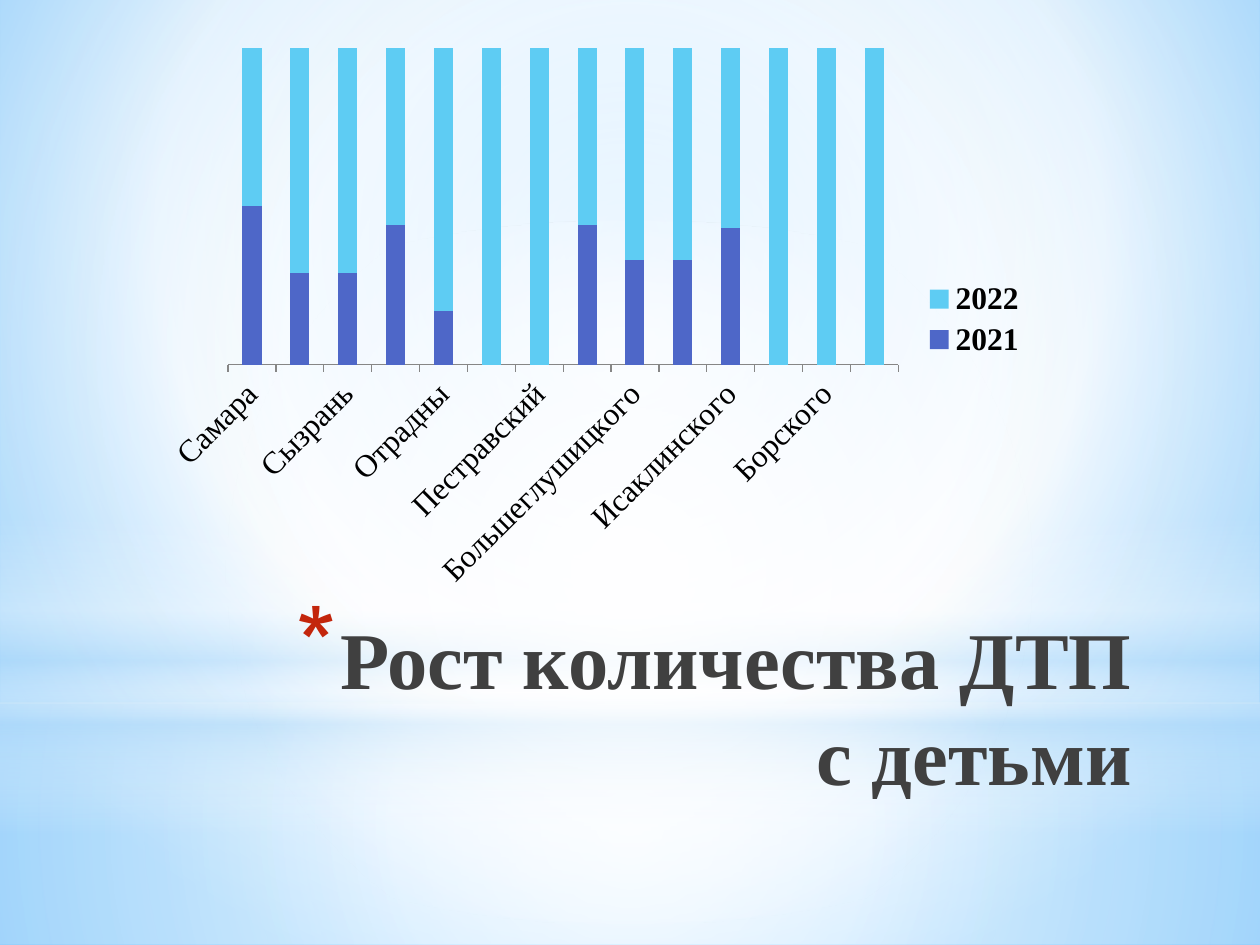
from dataclasses import dataclass

from lxml import etree
from pptx import Presentation
from pptx.chart.data import CategoryChartData
from pptx.dml.color import RGBColor
from pptx.enum import chart as ch, shapes, text
from pptx.oxml import parse_xml
from pptx.oxml.ns import nsdecls, qn
from pptx.util import Inches, Pt

FONT = "Times New Roman"
PALE = "B4DCFA"
WHITE = "FFFFFF"
CITIES = {  # share of 2021 in the two-year total, percent
    "Самара": 50, "Чапаевск": 29, "Сызрань": 29, "Новокуйбышевск": 44,
    "Отрадны": 17, "Камышлинский": 0, "Пестравский": 0, "Безенчукского": 44,
    "Большеглушицкого": 33, "Похвистневского": 33, "Исаклинского": 43,
    "Кошкинского": 0, "Борского": 0, "Шигонского": 0,
}


@dataclass
class Gradient:
    """Stops are (position %, colour, opacity %); no focus means top to bottom."""
    stops: list[tuple[int, str, int]]
    focus: tuple[int, int, int, int] | None = None


@dataclass
class Glow:
    top: float
    height: float
    kind: shapes.MSO_SHAPE
    gradient: Gradient


CENTRE = (50, 50, 50, 50)
BACKDROP = Gradient([(0, "9ED5FF", 100), (60, WHITE, 100), (100, "5BB9FF", 100)],
                    (20, 10, 20, 60))
GLOWS = [
    Glow(5.58, 1.92, shapes.MSO_SHAPE.RECTANGLE,
         Gradient([(0, WHITE, 91), (37, WHITE, 76), (100, PALE, 79)], CENTRE)),
    Glow(0, 5.58, shapes.MSO_SHAPE.RECTANGLE,
         Gradient([(0, WHITE, 89), (48, WHITE, 62), (100, PALE, 79)], CENTRE)),
    Glow(4.12, 2.5, shapes.MSO_SHAPE.RECTANGLE,
         Gradient([(0, WHITE, 0), (29, WHITE, 30), (45, PALE, 40),
                   (55, WHITE, 26), (65, PALE, 60), (100, WHITE, 0)])),
    Glow(1.75, 5.58, shapes.MSO_SHAPE.OVAL,
         Gradient([(0, WHITE, 100), (56, WHITE, 0)], CENTRE)),
]


def rgb(colour: str) -> RGBColor:
    return RGBColor.from_string(colour)


def apply_gradient(fill, owner, gradient: Gradient) -> None:
    fill.gradient()
    stops = "".join(
        f'<a:gs pos="{pos * 1000}"><a:srgbClr val="{colour}">'
        f'<a:alpha val="{opacity * 1000}"/></a:srgbClr></a:gs>'
        for pos, colour, opacity in gradient.stops)
    if gradient.focus:
        left, top, right, bottom = (side * 1000 for side in gradient.focus)
        direction = (f'<a:path path="circle"><a:fillToRect l="{left}" t="{top}" '
                     f'r="{right}" b="{bottom}"/></a:path>')
    else:
        direction = '<a:lin ang="5400000" scaled="0"/>'
    old = owner.find(".//" + qn("a:gradFill"))
    old.getparent().replace(old, parse_xml(
        f'<a:gradFill {nsdecls("a")} rotWithShape="1"><a:gsLst>{stops}</a:gsLst>'
        f'{direction}</a:gradFill>'))


def add_glow(slide, glow: Glow) -> None:
    shape = slide.shapes.add_shape(glow.kind, 0, Inches(glow.top),
                                   Inches(10), Inches(glow.height))
    shape.shadow.inherit = False
    shape.line.fill.background()
    apply_gradient(shape.fill, shape._element.spPr, glow.gradient)


def format_title(slide) -> None:
    title = slide.shapes.title
    slide.shapes._spTree.append(title._element)  # in front of the glows
    title.left, title.top = Inches(1.96), Inches(4.78)
    title.width, title.height = Inches(7.12), Inches(1.25)
    frame = title.text_frame
    frame.word_wrap = True
    frame.auto_size = text.MSO_AUTO_SIZE.NONE
    frame.vertical_anchor = text.MSO_ANCHOR.TOP
    heading = frame.paragraphs[0]
    heading.alignment = text.PP_ALIGN.RIGHT
    run = heading.add_run()
    run.text = "Рост количества ДТП с детьми"
    run.font.name, run.font.size, run.font.bold = FONT, Pt(46), True
    run.font.color.rgb = rgb("404040")
    props = heading._p.get_or_add_pPr()
    props.set("marL", str(Inches(0.35)))
    props.set("indent", str(-Inches(0.35)))
    colour = etree.SubElement(props, qn("a:buClr"))
    etree.SubElement(colour, qn("a:srgbClr"), val="C3260C")
    etree.SubElement(props, qn("a:buSzPct"), val="128000")
    etree.SubElement(props, qn("a:buChar"), char="*")


def place_plot(chart, x: float, y: float, w: float, h: float) -> None:
    """Fix the inner plot area, in fractions of the chart."""
    area = chart._chartSpace.chart.plotArea
    for old in area.findall(qn("c:layout")):
        area.remove(old)
    sizes = "".join(f'<c:{tag} val="{value}"/>'
                    for tag, value in zip("xywh", (x, y, w, h)))
    area.insert(0, parse_xml(
        f'<c:layout {nsdecls("c")}><c:manualLayout><c:layoutTarget val="inner"/>'
        f'<c:xMode val="edge"/><c:yMode val="edge"/>{sizes}'
        f'</c:manualLayout></c:layout>'))


def add_accident_chart(slide) -> None:
    data = CategoryChartData()
    data.categories = list(CITIES)
    data.add_series("2021", list(CITIES.values()))
    data.add_series("2022", [100 - share for share in CITIES.values()])
    chart = slide.shapes.add_chart(
        ch.XL_CHART_TYPE.COLUMN_STACKED_100, Inches(1.25), Inches(0.29),
        Inches(7), Inches(4.49), data).chart
    chart.has_title = False
    chart.font.name, chart.font.size = FONT, Pt(18)
    chart.font.color.rgb = rgb("000000")
    plot = chart.plots[0]
    plot.gap_width, plot.overlap, plot.vary_by_categories = 150, 100, False
    for series, colour in zip(plot.series, ("4E67C8", "5ECCF3")):
        series.format.fill.solid()
        series.format.fill.fore_color.rgb = rgb(colour)
    chart.value_axis.visible = False
    chart.value_axis.has_major_gridlines = False
    cities = chart.category_axis
    cities.major_tick_mark = ch.XL_TICK_MARK.OUTSIDE
    cities.format.line.color.rgb = rgb("868686")
    cities.tick_labels.font.size = Pt(18)
    cities._element.find(qn("c:txPr")).find(qn("a:bodyPr")).set("rot", "-2700000")
    chart.has_legend = True
    chart.legend.position = ch.XL_LEGEND_POSITION.RIGHT
    chart.legend.include_in_layout = False
    chart.legend.font.bold = True
    chart.legend.font.size = Pt(18)
    place_plot(chart, 0.08, 0.02, 0.76, 0.56)


def main() -> None:
    deck = Presentation()
    deck.slide_width, deck.slide_height = Inches(10), Inches(7.5)
    slide = deck.slides.add_slide(deck.slide_layouts[5])
    apply_gradient(slide.background.fill, slide._element, BACKDROP)
    for glow in GLOWS:
        add_glow(slide, glow)
    format_title(slide)
    add_accident_chart(slide)
    deck.save("out.pptx")


if __name__ == "__main__":
    main()
